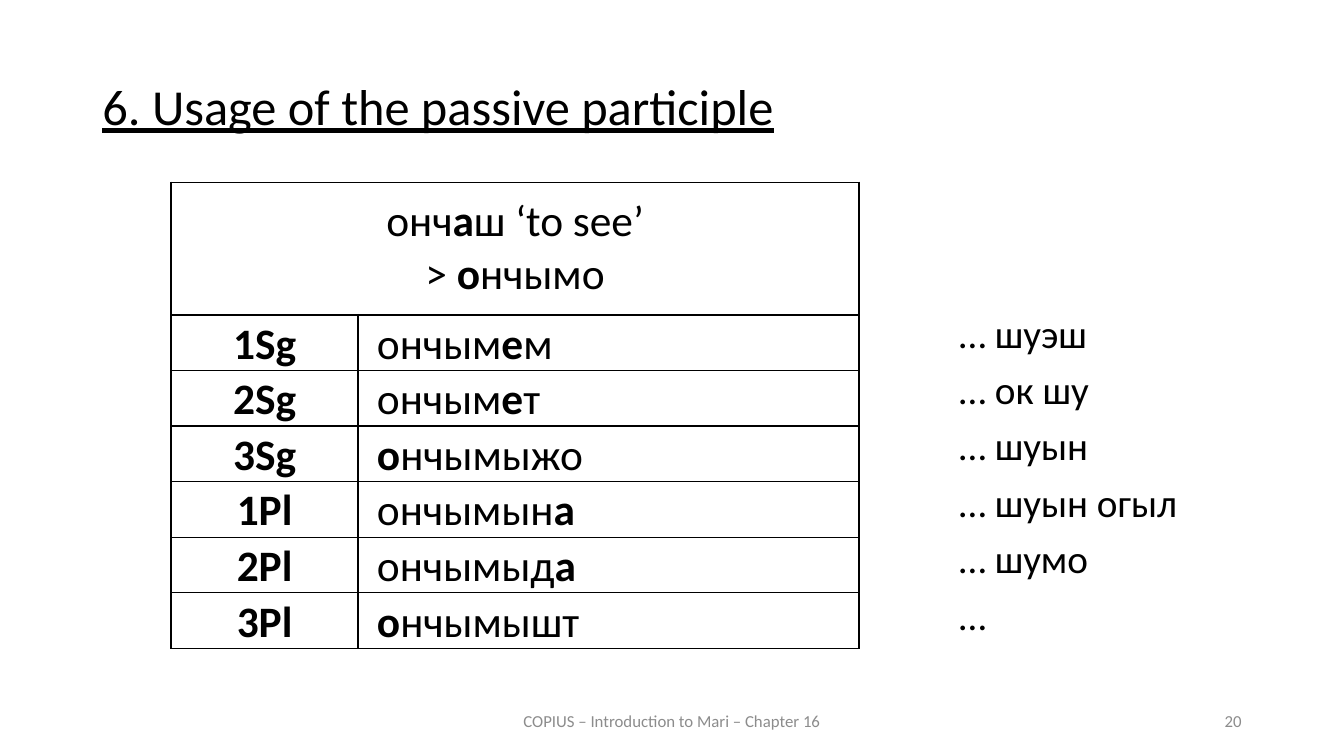
from lxml import etree
from pptx import Presentation
from pptx.dml.color import RGBColor
from pptx.enum.text import MSO_ANCHOR, MSO_AUTO_SIZE, PP_ALIGN
from pptx.oxml.ns import qn
from pptx.util import Pt

BLACK = RGBColor(0x00, 0x00, 0x00)
GREY = RGBColor(0x8C, 0x8C, 0x8C)
FONT = "Calibri"
LEFT, CENTER = PP_ALIGN.LEFT, PP_ALIGN.CENTER
RIGHT, JUSTIFY = PP_ALIGN.RIGHT, PP_ALIGN.JUSTIFY
TOP, MIDDLE = MSO_ANCHOR.TOP, MSO_ANCHOR.MIDDLE
NO_AUTOFIT = MSO_AUTO_SIZE.NONE
TITLE_ONLY = 5

TABLE_SIZE = 31
HEADER_HEIGHT, ROW_HEIGHT = 94.5, 39.75
COLUMN_WIDTHS = (133.2, 357.8)
THIN, THICK = 1, 1.5
HEADER_MARGINS = (18.7, 9.4)
BODY_MARGINS = (13.7, 2.2, 13.7, 0)

HEADER = ("онч*а*ш ‘to see’", "> *о*нчымо")
FORMS = (
    ("*1Sg*", "ончым*е*м"),
    ("*2Sg*", "ончым*е*т"),
    ("*3Sg*", "*о*нчымыжо"),
    ("*1Pl*", "ончымын*а*"),
    ("*2Pl*", "ончымыд*а*"),
    ("*3Pl*", "*о*нчымышт"),
)
CONTINUATIONS = ("… шуэш", "… ок шу", "… шуын", "… шуын огыл", "… шумо", "…")


def write_lines(frame, lines, size, align, color=BLACK, underline=False,
                line_spacing=None, space_before=0):
    """Write one paragraph per line, with text between asterisks in bold."""
    for index, line in enumerate(lines):
        paragraph = frame.add_paragraph() if index else frame.paragraphs[0]
        paragraph.alignment = align
        paragraph.space_before = Pt(space_before)
        if line_spacing:
            paragraph.line_spacing = line_spacing
        for position, text in enumerate(line.split("*")):
            if not text:
                continue
            run = paragraph.add_run()
            run.text = text
            run.font.name = FONT
            run.font.size = Pt(size)
            run.font.bold = position % 2 == 1
            run.font.underline = underline
            run.font.color.rgb = color


def add_title(slide, text):
    """Place and fill the title placeholder."""
    title = slide.shapes.title
    title.left, title.top, title.width, title.height = Pt(66), Pt(54.7), Pt(828), Pt(60)
    frame = title.text_frame
    frame.auto_size = NO_AUTOFIT
    frame.vertical_anchor = TOP
    write_lines(frame, [text], 36, JUSTIFY, underline=True,
                line_spacing=0.9, space_before=12)


def add_text(slide, box, lines, size, align, anchor=TOP, **style):
    """Add a wrapping text box."""
    shape = slide.shapes.add_textbox(*(Pt(value) for value in box))
    frame = shape.text_frame
    frame.word_wrap = True
    frame.vertical_anchor = anchor
    write_lines(frame, lines, size, align, **style)


def set_borders(cell, top, bottom):
    """Draw black cell borders, with thick sides."""
    properties = cell._tc.get_or_add_tcPr()
    widths = {"a:lnL": THICK, "a:lnR": THICK, "a:lnT": top, "a:lnB": bottom}
    for index, (tag, width) in enumerate(widths.items()):
        line = etree.Element(qn(tag), w=str(Pt(width)))
        fill = etree.SubElement(line, qn("a:solidFill"))
        etree.SubElement(fill, qn("a:srgbClr"), val=str(BLACK))
        properties.insert(index, line)


def fill_cell(cell, lines, align, margins, top, bottom):
    """Write and format one table cell."""
    cell.fill.background()
    cell.margin_left, cell.margin_top, cell.margin_right, cell.margin_bottom = (
        Pt(value) for value in margins)
    set_borders(cell, top, bottom)
    write_lines(cell.text_frame, lines, TABLE_SIZE, align)


def add_forms_table(slide):
    """Add the table of participle forms with possessive endings."""
    height = HEADER_HEIGHT + ROW_HEIGHT * len(FORMS)
    table = slide.shapes.add_table(
        len(FORMS) + 1, 2, Pt(122.4), Pt(130.3), Pt(sum(COLUMN_WIDTHS)), Pt(height)).table
    table.first_row = False
    table.horz_banding = False
    for column, width in zip(table.columns, COLUMN_WIDTHS):
        column.width = Pt(width)
    for index, row in enumerate(table.rows):
        row.height = Pt(ROW_HEIGHT if index else HEADER_HEIGHT)
    table.cell(0, 0).merge(table.cell(0, 1))
    fill_cell(table.cell(0, 0), HEADER, CENTER, HEADER_MARGINS * 2, THICK, THICK)
    set_borders(table.cell(0, 1), THICK, THICK)
    for index, form in enumerate(FORMS, 1):
        top = THICK if index == 1 else THIN
        bottom = THICK if index == len(FORMS) else THIN
        for column, (text, align) in enumerate(zip(form, (CENTER, JUSTIFY))):
            fill_cell(table.cell(index, column), [text], align, BODY_MARGINS, top, bottom)


def main():
    """Build and save the slide."""
    presentation = Presentation()
    presentation.slide_width, presentation.slide_height = Pt(960), Pt(540)
    slide = presentation.slides.add_slide(presentation.slide_layouts[TITLE_ONLY])
    add_title(slide, "6. Usage of the passive participle")
    add_text(slide, (318, 500.5, 324, 28.75), ["COPIUS – Introduction to Mari – Chapter 16"],
             12, CENTER, MIDDLE, color=GREY)
    add_text(slide, (678, 500.5, 216, 28.75), ["20"], 12, RIGHT, MIDDLE, color=GREY)
    add_forms_table(slide)
    add_text(slide, (678, 221, 246, 264), CONTINUATIONS, 28, LEFT,
             line_spacing=0.9, space_before=10)
    presentation.save("out.pptx")


if __name__ == "__main__":
    main()
